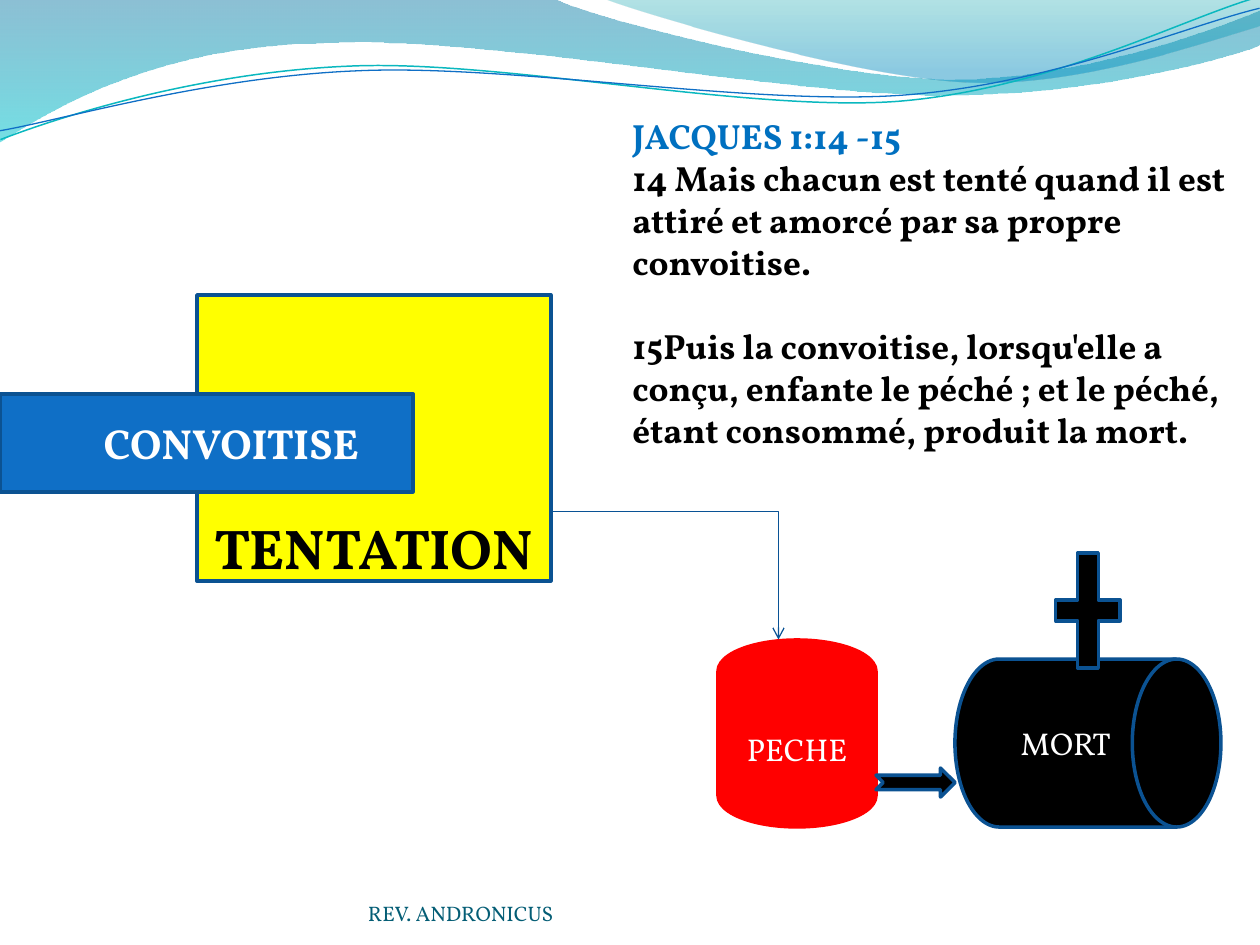
from lxml import etree
from pptx import Presentation
from pptx.dml.color import RGBColor
from pptx.enum.shapes import MSO_CONNECTOR, MSO_SHAPE
from pptx.enum.text import MSO_ANCHOR, PP_ALIGN
from pptx.oxml.ns import qn
from pptx.util import Pt

RECT = MSO_SHAPE.RECTANGLE
DISK = MSO_SHAPE.FLOWCHART_MAGNETIC_DISK
DRUM = MSO_SHAPE.FLOWCHART_DIRECT_ACCESS_STORAGE
ARROW = MSO_SHAPE.NOTCHED_RIGHT_ARROW
PLUS = MSO_SHAPE.MATH_PLUS
FONT = "Vollkorn"
EMU_PER_INCH = 914400
PX = EMU_PER_INCH / 126

rgb = RGBColor.from_string


def px(*values):
    """Turn pixels into EMU."""
    return [round(v * PX) for v in values]


def add_curve(shapes, segments, close):
    """Draw lines (2 numbers) and Bezier curves (6 numbers) from the first point."""
    pts = [tuple(px(*seg[i:i + 2])) for seg in segments for i in range(0, len(seg), 2)]
    builder = shapes.build_freeform(*pts[0], scale=1.0)
    builder.add_line_segments(pts[1:], close=close)
    sp = builder.convert_to_shape()
    lines = list(sp._element.spPr.iter(qn("a:lnTo")))
    for seg in segments[1:]:
        first = lines.pop(0)
        if len(seg) == 6:
            curve = etree.Element(qn("a:cubicBezTo"))
            first.addprevious(curve)
            for step in (first, lines.pop(0), lines.pop(0)):
                curve.append(step[0])
                step.getparent().remove(step)
    return sp


prs = Presentation()
prs.slide_width, prs.slide_height = px(1260, 945)
s = prs.slides.add_slide(prs.slide_layouts[6])

# Bands: outline, gradient stops (position, colour, opacity %)
bands = [
    ([(0, 0), (554, -1), (600, 21, 837, 79, 955, 79), (1074, 79, 1207, 33, 1260, 11),
      (1261, 45), (1239, 55, 1096, 96, 940, 95), (784, 95, 481, 35, 324, 43),
      (163, 45, 58, 105, -1, 142)],
     [(0, "0074A1", 45), (1, "00C6CF", 55)]),
    ([(604, -1), (641, 14, 859, 78, 969, 82), (1079, 87, 1211, 40, 1260, 26), (1260, 0)],
     [(0, "00A1A9", 30), (0.8, "008BBF", 45)]),
]
for outline, stops in bands:
    sp = add_curve(s.shapes, outline, True)
    sp.shadow.inherit = False
    sp.line.fill.background()
    sp.fill.gradient()
    sp.fill.gradient_angle = 270
    for stop, (position, color, opacity) in zip(sp.fill.gradient_stops, stops):
        stop.position = position
        stop.color.rgb = rgb(color)
    for clr, (_, _, opacity) in zip(sp._element.spPr.iter(qn("a:srgbClr")), stops):
        etree.SubElement(clr, qn("a:alpha")).set("val", str(opacity * 1000))

# Wave lines: outline before turning, colour, width
waves = [
    ([(-2, 110), (58, 90, 199, 52, 350, 53), (499, 53, 745, 118, 896, 114),
      (1049, 109, 1184, 45, 1260, 27)], "0AB8BF", 0.85),
    ([(-2, 101), (57, 94, 207, 57, 357, 58), (509, 58, 750, 112, 902, 108),
      (1052, 104, 1188, 52, 1262, 38)], "0F6FC6", 0.75),
]
for outline, color, width in waves:
    sp = add_curve(s.shapes, outline, False)
    sp.shadow.inherit = False
    sp.rotation = 357.3
    sp.fill.background()
    sp.line.color.rgb = rgb(color)
    sp.line.width = Pt(width)

# Footer
tb = s.shapes.add_textbox(*px(368, 876, 462, 50))
tf = tb.text_frame
tf.word_wrap = True
tf.vertical_anchor = MSO_ANCHOR.BOTTOM
tf.margin_left = tf.margin_top = tf.margin_right = tf.margin_bottom = 0
p = tf.paragraphs[0]
p.text = "REV. ANDRONICUS"
p.font.name, p.font.size = FONT, Pt(12)
p.font.color.rgb = rgb("045D75")

# Steps: preset, box, fill, line, text, size, text colour, bold
steps = [
    (RECT, (197, 295, 354, 286), "FFFF00", "0B5292", "TENTATION", 32, "000000", True),
    (RECT, (0, 394, 413, 98), "0F6FC6", "0B5292", "CONVOITISE", 24, "FFFFFF", True),
    (DISK, (718, 640, 158, 187), "FF0000", "FF0000", "PECHE", 18, "FFFFFF", False),
    (DRUM, (955, 659, 266, 168), "000000", "0B5292", "MORT", 18, "FFFFFF", False),
    (ARROW, (876, 768, 79, 29), "000000", "0B5292", "", 18, "FFFFFF", False),
    (PLUS, (1044, 532, 88, 157), "000000", "0B5292", "", 18, "FFFFFF", False),
]
for preset, box, fill, line, text, size, color, bold in steps:
    sp = s.shapes.add_shape(preset, *px(*box))
    sp.shadow.inherit = False
    sp.fill.solid()
    sp.fill.fore_color.rgb = rgb(fill)
    sp.line.color.rgb = rgb(line)
    sp.line.width = Pt(2)
    if not text:
        continue
    tf = sp.text_frame
    tf.vertical_anchor = MSO_ANCHOR.MIDDLE
    if text == "TENTATION":
        tf.vertical_anchor = MSO_ANCHOR.BOTTOM
        tf.margin_bottom = 0
    elif text == "CONVOITISE":
        tf.margin_left = px(62)[0]
    p = tf.paragraphs[0]
    p.text = text
    p.alignment = PP_ALIGN.CENTER
    p.font.name, p.font.size, p.font.bold = FONT, Pt(size), bold
    p.font.color.rgb = rgb(color)

# Elbow from temptation to sin, turned so that it leaves downwards
cx = s.shapes.add_connector(MSO_CONNECTOR.ELBOW, *px(793, 398, 537, 625))
cx.line.color.rgb = rgb("095295")
cx.line.width = Pt(0.75)
spPr = cx._element.spPr
spPr.find(qn("a:xfrm")).set("rot", str(270 * 60000))
etree.SubElement(spPr.find(qn("a:ln")), qn("a:tailEnd")).set("type", "arrow")
etree.SubElement(spPr, qn("a:effectLst"))

# Scripture
verses = [
    ("JACQUES 1:14 -15", "0070C0", 0),
    ("14 Mais chacun est tenté quand il est attiré et amorcé par sa propre convoitise.",
     "000000", 24),
    ("15Puis la convoitise, lorsqu'elle a conçu, enfante le péché ; et le péché, "
     "étant consommé, produit la mort.", "000000", 0),
]
tb = s.shapes.add_textbox(*px(620, 108, 640, 391))
tf = tb.text_frame
tf.word_wrap = True
for i, (text, color, gap) in enumerate(verses):
    p = tf.add_paragraph() if i else tf.paragraphs[0]
    p.text = text
    p.space_after = Pt(gap)
    p.font.name, p.font.size, p.font.bold = FONT, Pt(20), True
    p.font.color.rgb = rgb(color)

prs.save("out.pptx")
